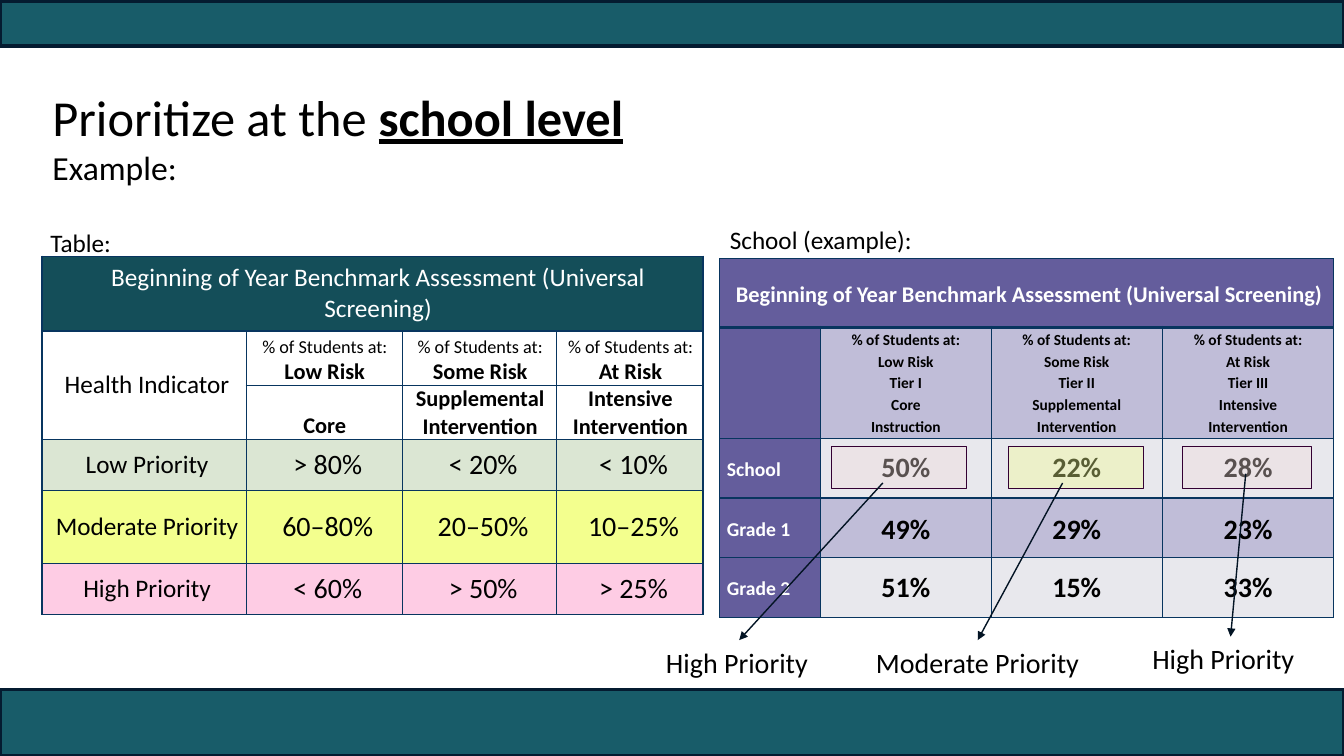
from dataclasses import dataclass

from lxml.etree import SubElement
from pptx import Presentation
from pptx.dml.color import RGBColor
from pptx.enum.shapes import MSO_CONNECTOR, MSO_SHAPE
from pptx.enum.text import MSO_ANCHOR, MSO_AUTO_SIZE, PP_ALIGN
from pptx.oxml import parse_xml
from pptx.oxml.ns import nsdecls, qn
from pptx.util import Inches, Pt

FONT = "Calibri"
COLORS = {
    "bar": "185C69", "bar edge": "041B30", "ink": "000000", "white": "FFFFFF",
    "grid line": "08355F", "arrow": "031424", "mark edge": "330033",
    "heading": "144E59", "low": "DBE6D3", "moderate": "F3FF8E", "high": "FECCE4",
    "purple": "645D9C", "lilac": "C0BDD8", "pale": "E8E8ED", "rose": "F2DCDB",
}
# The slide is laid out on a grid of 160 columns by 90 rows.
COLUMNS, ROWS = 160, 90
WIDTH, HEIGHT = Inches(13.33), Inches(7.5)


@dataclass
class Place:
    left: float
    top: float
    width: float
    height: float

    def box(self) -> tuple[int, int, int, int]:
        return across(self.left), down(self.top), across(self.width), down(self.height)


@dataclass
class Line:
    text: str
    size: float
    bold: bool = False
    color: str = "ink"
    underline: bool = False


@dataclass
class Cell:
    lines: list[Line]
    fill: str = ""
    anchor: MSO_ANCHOR = MSO_ANCHOR.MIDDLE
    align: PP_ALIGN = PP_ALIGN.CENTER
    left: float = 0.08
    right: float = 0.07
    spacing: float = 1.0


@dataclass
class Verdict:
    mark: Place
    fill: str
    start: tuple[float, float]
    label: Place
    text: str


def across(columns: float) -> int:
    return round(WIDTH * columns / COLUMNS)


def down(rows: float) -> int:
    return round(HEIGHT * rows / ROWS)


def rgb(name: str) -> RGBColor:
    return RGBColor.from_string(COLORS[name])


def add_span(para, line: Line) -> None:
    span = para.add_run()
    span.text = line.text
    font = span.font
    font.name, font.size, font.bold = FONT, Pt(line.size), line.bold
    font.underline = line.underline
    font.color.rgb = rgb(line.color)


def add_rectangle(page, place: Place, fill: str, edge: str, weight: float):
    shape = page.shapes.add_shape(MSO_SHAPE.RECTANGLE, *place.box())
    shape.shadow.inherit = False
    shape.fill.solid()
    shape.fill.fore_color.rgb = rgb(fill)
    shape.line.color.rgb = rgb(edge)
    shape.line.width = Pt(weight)
    return shape


def add_label(page, place: Place, text: str, size: float):
    box = page.shapes.add_textbox(*place.box())
    box.text_frame.word_wrap = True
    box.text_frame.auto_size = MSO_AUTO_SIZE.SHAPE_TO_FIT_TEXT
    add_span(box.text_frame.paragraphs[0], Line(text, size))
    return box


def set_borders(cell, top: float, bottom: float) -> None:
    properties = cell._tc.get_or_add_tcPr()
    sides = {"lnL": 1, "lnR": 1, "lnT": top, "lnB": bottom}
    for index, (side, weight) in enumerate(sides.items()):
        properties.insert(index, parse_xml(
            f'<a:{side} {nsdecls("a")} w="{Pt(weight)}"><a:solidFill>'
            f'<a:srgbClr val="{COLORS["grid line"]}"/></a:solidFill></a:{side}>'))


def fill_cell(cell, content: Cell) -> None:
    if content.fill:
        cell.fill.solid()
        cell.fill.fore_color.rgb = rgb(content.fill)
    else:
        cell.fill.background()
    cell.vertical_anchor = content.anchor
    cell.margin_left, cell.margin_right = Inches(content.left), Inches(content.right)
    cell.margin_top = cell.margin_bottom = 0
    for index, line in enumerate(content.lines):
        frame = cell.text_frame
        para = frame.add_paragraph() if index else frame.paragraphs[0]
        para.alignment, para.line_spacing = content.align, content.spacing
        add_span(para, line)


def add_grid(page, left: float, top: float, widths: list[float], heights: list[float],
             cells: list[list[Cell]], merges: list[tuple[int, int, int, int]],
             heading_rule: float) -> None:
    """Draw a table; heading_rule is the line width under its first row."""
    place = Place(left, top, sum(widths), sum(heights))
    table = page.shapes.add_table(len(heights), len(widths), *place.box()).table
    table.first_row = table.horz_banding = False
    for column, width in zip(table.columns, widths):
        column.width = across(width)
    for row, height in zip(table.rows, heights):
        row.height = down(height)
    for r, contents in enumerate(cells):
        for c, content in enumerate(contents):
            cell = table.cell(r, c)
            fill_cell(cell, content)
            set_borders(cell, heading_rule if r == 1 else 1, heading_rule if r == 0 else 1)
    for first_row, first_column, last_row, last_column in merges:
        table.cell(first_row, first_column).merge(table.cell(last_row, last_column))


def add_verdict(page, verdict: Verdict) -> None:
    """Mark a school value and point from it to its priority."""
    mark = add_rectangle(page, verdict.mark, verdict.fill, "mark edge", 0.5)
    color = mark.fill._xPr.find(f'{qn("a:solidFill")}/{qn("a:srgbClr")}')
    SubElement(color, qn("a:alpha"), val="37000")
    label = add_label(page, verdict.label, verdict.text, 20)
    x, y = across(verdict.start[0]), down(verdict.start[1])
    arrow = page.shapes.add_connector(MSO_CONNECTOR.STRAIGHT, x, y, x, y)
    arrow.end_connect(label, 0)
    arrow.line.color.rgb = rgb("arrow")
    arrow.line.width = Pt(1)
    SubElement(arrow.line._get_or_add_ln(), qn("a:tailEnd"), type="triangle")
    SubElement(arrow._element.spPr, qn("a:effectLst"))


def priority_cells() -> list[list[Cell]]:
    blank = Cell([])
    risks = [Cell([Line("% of Students at:", 13), Line(risk, 16, True)], anchor=MSO_ANCHOR.BOTTOM)
             for risk in ("Low Risk", "Some Risk", "At Risk")]
    supports = [Cell([Line(support, 16, True)], anchor=MSO_ANCHOR.BOTTOM)
                for support in ("Core", "Supplemental Intervention", "Intensive Intervention")]
    heading = Line("Beginning of Year Benchmark Assessment (Universal Screening)", 18, color="white")
    cells = [[Cell([heading], "heading", left=0.18)] + [Cell([], "heading")] * 3,
             [Cell([Line("Health Indicator", 18)], left=0.13)] + risks,
             [blank] + supports]
    for name, fill, values in (
            ("Low Priority", "low", ("> 80%", "< 20%", "< 10%")),
            ("Moderate Priority", "moderate", ("60–80%", "20–50%", "10–25%")),
            ("High Priority", "high", ("< 60%", "> 50%", "> 25%"))):
        cells.append([Cell([Line(name, 18)], fill, left=0.13)]
                     + [Cell([Line(value, 20)], fill, left=0.14) for value in values])
    return cells


def school_cells() -> list[list[Cell]]:
    heading = Line("Beginning of Year Benchmark Assessment (Universal Screening)", 16, True, "white")
    tiers = [("Low Risk", "Tier I", "Core", "Instruction"),
             ("Some Risk", "Tier II", "Supplemental Intervention"),
             ("At Risk", "Tier III", "Intensive", "Intervention")]
    cells = [[Cell([heading], "purple", align=PP_ALIGN.LEFT, left=0.16, right=0.05, spacing=1.15)]
             + [Cell([], "purple")] * 3,
             [Cell([], "purple")]
             + [Cell([Line(text, 11, True) for text in ("% of Students at:", *tier)], "lilac",
                     MSO_ANCHOR.TOP, left=0.07, spacing=1.15) for tier in tiers]]
    for name, fill, spacing, values in (
            ("School", "pale", 1.0, ("50%", "22%", "28%")),
            ("Grade 1", "lilac", 1.15, ("49%", "29%", "23%")),
            ("Grade 2", "pale", 1.0, ("51%", "15%", "33%"))):
        cells.append([Cell([Line(name, 14, True, "white")], "purple", align=PP_ALIGN.LEFT,
                           left=0.07, spacing=1.15)]
                     + [Cell([Line(value, 20, True)], fill, left=0.07, spacing=spacing)
                        for value in values])
    return cells


def add_title(page) -> None:
    title = page.shapes.title
    title.left, title.top, title.width, title.height = Place(4.8, 9.6, 150, 13.3).box()
    frame = title.text_frame
    frame.margin_left = Inches(0.12)
    frame.vertical_anchor = MSO_ANCHOR.MIDDLE
    for para, lines in (
            (frame.paragraphs[0], [Line("Prioritize at the ", 36),
                                   Line("school level", 36, True, underline=True)]),
            (frame.add_paragraph(), [Line("Example:", 24)])):
        para.alignment = PP_ALIGN.LEFT
        for line in lines:
            add_span(para, line)


def main() -> None:
    deck = Presentation()
    deck.slide_width, deck.slide_height = WIDTH, HEIGHT
    page = deck.slides.add_slide(deck.slide_layouts[5])
    for bar in (Place(0, 82.1, 160, 7.9), Place(0, 0.1, 160, 5.4)):
        add_rectangle(page, bar, "bar", "bar edge", 2.5)
    add_title(page)
    add_label(page, Place(4.8, 26.5, 31.8, 4.8), "Table:", 18)
    add_grid(page, 5, 30.5, [24.3, 18.6, 18.4, 17.4], [8.9, 6.5, 6.3, 6.1, 8.7, 6.1],
             priority_cells(), [(0, 0, 0, 3), (1, 0, 2, 0)], 1)
    add_label(page, Place(85.7, 26.1, 31.8, 4.8), "School (example):", 18)
    add_grid(page, 85.7, 30.8, [12, 20.3, 20.4, 20.4], [8.2, 13.2, 7.1, 7.1, 7.1],
             school_cells(), [(0, 0, 0, 3)], 3)
    for verdict in (
            Verdict(Place(99, 53.2, 16.1, 5), "rose", (105.1, 57.5),
                    Place(78.1, 76.2, 19.8, 5.2), "High Priority"),
            Verdict(Place(120, 53.2, 16.1, 5), "moderate", (126.5, 57.5),
                    Place(103.1, 76.2, 26.6, 5.2), "Moderate Priority"),
            Verdict(Place(140.8, 53.2, 15.3, 5), "rose", (148.3, 56.4),
                    Place(136, 75.8, 21, 5.2), "High Priority")):
        add_verdict(page, verdict)
    deck.save("out.pptx")


if __name__ == "__main__":
    main()
